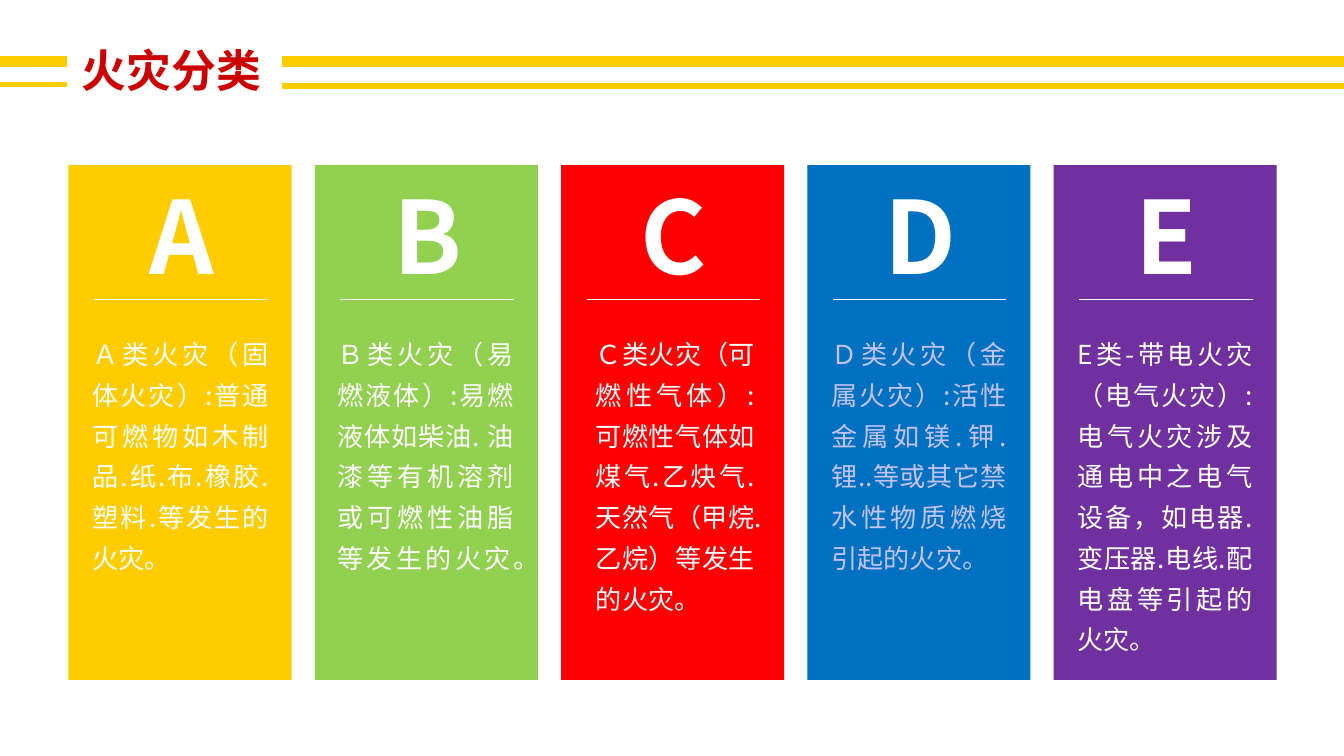
from collections import namedtuple

from lxml import etree
from pptx import Presentation
from pptx.dml.color import RGBColor
from pptx.enum.shapes import MSO_CONNECTOR, MSO_SHAPE
from pptx.enum.text import MSO_ANCHOR, MSO_AUTO_SIZE, PP_ALIGN
from pptx.oxml.ns import qn
from pptx.util import Inches, Pt

RECTANGLE = MSO_SHAPE.RECTANGLE
STRAIGHT = MSO_CONNECTOR.STRAIGHT
NO_AUTOFIT = MSO_AUTO_SIZE.NONE
TOP, MIDDLE = MSO_ANCHOR.TOP, MSO_ANCHOR.MIDDLE
LEFT, CENTER, JUSTIFY = PP_ALIGN.LEFT, PP_ALIGN.CENTER, PP_ALIGN.JUSTIFY

FONT = "Noto Sans CJK SC"
WHITE = RGBColor(0xFF, 0xFF, 0xFF)
YELLOW = RGBColor(0xFF, 0xCC, 0x00)
GREEN = RGBColor(0x92, 0xD0, 0x50)
RED = RGBColor(0xFF, 0x00, 0x00)
BLUE = RGBColor(0x00, 0x70, 0xC0)
PURPLE = RGBColor(0x70, 0x30, 0xA0)
LAVENDER = RGBColor(0xC4, 0xC3, 0xF5)
DARK_RED = RGBColor(0xCC, 0x00, 0x00)

SLIDE_WIDTH = 10
SLIDE_HEIGHT = SLIDE_WIDTH * 9 / 16
CARD_LEFT, LAST_CARD_LEFT, CARD_TOP = 0.51, 7.84, 1.23
CARD_WIDTH, CARD_HEIGHT = 1.66, 3.83

Box = namedtuple("Box", "left top width height")
FireClass = namedtuple("FireClass", "letter fill color text_left text_width text")

FIRE_CLASSES = [
    FireClass("A", YELLOW, WHITE, 0.08, 1.51,
              "Ａ类火灾（固体火灾）:普通可燃物如木制品.纸.布.橡胶.塑料.等发生的火灾。"),
    FireClass("B", GREEN, WHITE, 0.07, 1.51,
              "Ｂ类火灾（易燃液体）:易燃液体如柴油. 油漆等有机溶剂或可燃性油脂等发生的火灾。"),
    FireClass("C", RED, WHITE, 0.16, 1.38,
              "Ｃ类火灾（可燃性气体）:可燃性气体如煤气.乙炔气.天然气（甲烷.乙烷）等发生的火灾。"),
    FireClass("D", BLUE, LAVENDER, 0.08, 1.5,
              "Ｄ类火灾（金属火灾）:活性金属如镁.钾.锂..等或其它禁水性物质燃烧引起的火灾。"),
    FireClass("E", PURPLE, WHITE, 0.08, 1.5,
              "E类-带电火灾（电气火灾）:电气火灾涉及通电中之电气设备，如电器.变压器.电线.配电盘等引起的火灾。"),
]


def place(shape, box):
    """Move and size a shape to a box given in inches."""
    shape.left, shape.top, shape.width, shape.height = map(Inches, box)


def write(shape, text, size, color, alignment, anchor, bold=False):
    """Write one formatted paragraph into a shape and return it."""
    frame = shape.text_frame
    frame.word_wrap = True
    frame.auto_size = NO_AUTOFIT
    frame.vertical_anchor = anchor
    paragraph = frame.paragraphs[0]
    paragraph.alignment = alignment
    run = paragraph.add_run()
    run.text = text
    font = run.font
    font.name, font.size, font.bold = FONT, Pt(size), bold
    font.color.rgb = color
    east_asian = etree.Element(qn("a:ea"), typeface=FONT)
    run._r.get_or_add_rPr().find(qn("a:latin")).addnext(east_asian)
    return paragraph


def add_rule(slide, left, right, y, color, weight):
    """Draw a horizontal line without a shadow."""
    line = slide.shapes.add_connector(
        STRAIGHT, Inches(left), Inches(y), Inches(right), Inches(y))
    line.line.color.rgb = color
    line.line.width = Pt(weight)
    etree.SubElement(line._element.spPr, qn("a:effectLst"))


def add_header(slide, box):
    """Place the title between two pairs of stripes across the box."""
    title = slide.shapes.title
    place(title, Box(CARD_LEFT, box.top, 4.58, box.height))
    write(title, "火灾分类", 24, DARK_RED, LEFT, MIDDLE, bold=True)
    right = box.left + box.width
    for start, end, thin_y in ((box.left, 0.5, 0.63), (2.1, right, 0.64)):
        add_rule(slide, start, end, 0.46, YELLOW, 6)
        add_rule(slide, start, end, thin_y, YELLOW, 3)


def add_card(slide, box, fire_class):
    """Draw a coloured card with its letter, rule and description."""
    shapes = slide.shapes
    card = shapes.add_shape(RECTANGLE, *map(Inches, box))
    card.shadow.inherit = False
    card.fill.solid()
    card.fill.fore_color.rgb = fire_class.fill
    card.line.fill.background()

    letter_box = Box(box.left + 0.37, box.top + 0.17, 0.94, 0.69)
    letter = shapes.add_textbox(*map(Inches, letter_box))
    write(letter, fire_class.letter, 54, WHITE, CENTER, MIDDLE, bold=True)

    rule_left = box.left + 0.19
    add_rule(slide, rule_left, rule_left + 1.29, box.top + 1, WHITE, 0.75)

    text_box = Box(box.left + fire_class.text_left, box.top + 1.17,
                   fire_class.text_width, 2.48)
    description = shapes.add_textbox(*map(Inches, text_box))
    paragraph = write(description, fire_class.text, 14, fire_class.color, JUSTIFY, TOP)
    paragraph.line_spacing = 1.3
    paragraph.space_before = Pt(2.8)


def main():
    """Build the fire classes slide and save it."""
    presentation = Presentation()
    presentation.slide_width = Inches(SLIDE_WIDTH)
    presentation.slide_height = Inches(SLIDE_HEIGHT)
    slide = presentation.slides.add_slide(presentation.slide_layouts[5])
    add_header(slide, Box(0, 0.17, SLIDE_WIDTH, 0.69))
    pitch = (LAST_CARD_LEFT - CARD_LEFT) / (len(FIRE_CLASSES) - 1)
    for column, fire_class in enumerate(FIRE_CLASSES):
        left = CARD_LEFT + column * pitch
        add_card(slide, Box(left, CARD_TOP, CARD_WIDTH, CARD_HEIGHT), fire_class)
    presentation.save("out.pptx")


if __name__ == "__main__":
    main()
